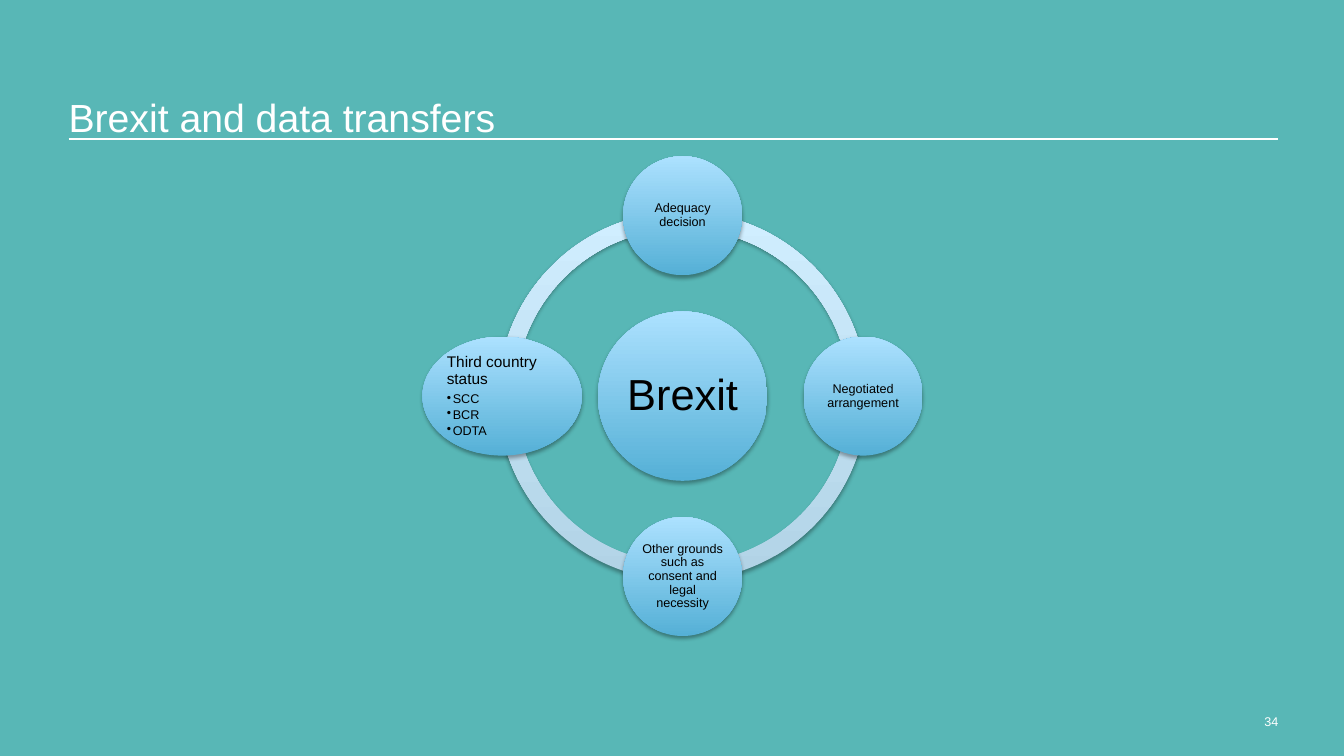
from lxml.etree import SubElement
from pptx import Presentation
from pptx.dml.color import RGBColor
from pptx.enum.shapes import MSO_CONNECTOR, MSO_SHAPE
from pptx.enum.text import MSO_ANCHOR as Anchor, MSO_AUTO_SIZE, PP_ALIGN as Align
from pptx.oxml.ns import qn
from pptx.util import Inches, Pt

TEAL = RGBColor(0x58, 0xB7, 0xB6)
WHITE = RGBColor(0xFF, 0xFF, 0xFF)
BLACK = RGBColor(0x00, 0x00, 0x00)
CIRCLE_COLOURS = RGBColor(0x55, 0xB0, 0xD6), RGBColor(0xAC, 0xE1, 0xFF)
RING_COLOURS = RGBColor(0xB2, 0xD3, 0xE6), RGBColor(0xD0, 0xEE, 0xFF)

CENTRE_X, CENTRE_Y = 6.77, 3.93
ORBIT = 1.79
RING_SIZE = 3.66
HUB_SIZE = 1.68
NODE_SIZE = 1.18
QUARTER_TURN = 54  # adjustment units: 0.6 per degree


def add_run(paragraph, text, size, colour):
    run = paragraph.add_run()
    run.text = text
    run.font.name = "Arial"
    run.font.size = Pt(size)
    run.font.color.rgb = colour


def set_frame(frame, inset, anchor):
    frame.word_wrap = True
    frame.auto_size = MSO_AUTO_SIZE.NONE
    frame.vertical_anchor = anchor
    frame.margin_left = frame.margin_right = Inches(inset)
    frame.margin_top = frame.margin_bottom = Inches(inset)


def add_shadow(shape):
    shape.shadow.inherit = False
    effects = shape._element.spPr.find(qn("a:effectLst"))
    shadow = SubElement(effects, qn("a:outerShdw"), blurRad=str(Pt(3.1)),
                        dist=str(Pt(1.8)), dir="5400000", rotWithShape="0")
    colour = SubElement(shadow, qn("a:srgbClr"), val=str(BLACK))
    SubElement(colour, qn("a:alpha"), val="35000")


def add_shaded_shape(slide, kind, centre_x, centre_y, width, height, colours):
    shape = slide.shapes.add_shape(
        kind, Inches(centre_x - width / 2), Inches(centre_y - height / 2),
        Inches(width), Inches(height))
    shape.fill.gradient()
    shape.fill.gradient_angle = 90
    for stop, colour in zip(shape.fill.gradient_stops, colours):
        stop.color.rgb = colour
    shape.line.fill.background()
    add_shadow(shape)
    return shape


def add_ring(slide):
    """Four quarter arcs that close into one ring."""
    for quarter in (2, 1, 0, 3):
        arc = add_shaded_shape(slide, MSO_SHAPE.BLOCK_ARC, CENTRE_X, CENTRE_Y,
                               RING_SIZE, RING_SIZE, RING_COLOURS)
        arc.adjustments[0] = quarter * QUARTER_TURN
        arc.adjustments[1] = (quarter + 1) % 4 * QUARTER_TURN
        arc.adjustments[2] = 0.046


def add_circle(slide, centre_x, centre_y, width, height, text, size,
               inset=0.01, align=Align.CENTER):
    circle = add_shaded_shape(slide, MSO_SHAPE.OVAL, centre_x, centre_y,
                              width, height, CIRCLE_COLOURS)
    set_frame(circle.text_frame, inset, Anchor.MIDDLE)
    paragraph = circle.text_frame.paragraphs[0]
    paragraph.alignment = align
    paragraph.line_spacing = 0.9
    add_run(paragraph, text, size, BLACK)
    return circle


def add_bullets(frame, items):
    frame.paragraphs[0].space_after = Pt(3.85)
    for item in items:
        paragraph = frame.add_paragraph()
        properties = paragraph._p.get_or_add_pPr()
        properties.set("marL", str(Inches(0.06)))
        properties.set("indent", str(Inches(-0.06)))
        bullet_colour = SubElement(properties, qn("a:buClr"))
        SubElement(bullet_colour, qn("a:srgbClr"), val=str(BLACK))
        SubElement(properties, qn("a:buChar"), char="•")
        paragraph.level = 1
        paragraph.alignment = Align.LEFT
        paragraph.line_spacing = 0.9
        paragraph.space_after = Pt(1.35)
        add_run(paragraph, item, 9, BLACK)


def add_title(slide, text):
    title = slide.shapes.title
    title.left, title.top = Inches(0.68), Inches(0.91)
    title.width, title.height = Inches(11.98), Inches(0.48)
    set_frame(title.text_frame, 0, Anchor.BOTTOM)
    paragraph = title.text_frame.paragraphs[0]
    paragraph.alignment = Align.LEFT
    add_run(paragraph, text, 28, WHITE)


def add_title_rule(slide):
    rule = slide.shapes.add_connector(MSO_CONNECTOR.STRAIGHT, Inches(0.68),
                                      Inches(1.38), Inches(12.68), Inches(1.38))
    rule.line.color.rgb = WHITE
    rule.line.width = Pt(1.25)
    SubElement(rule._element.spPr, qn("a:effectLst"))


def add_page_number(slide, number):
    box = slide.shapes.add_textbox(Inches(11.39), Inches(7.08),
                                   Inches(1.29), Inches(0.46))
    set_frame(box.text_frame, 0, Anchor.TOP)
    paragraph = box.text_frame.paragraphs[0]
    paragraph.alignment = Align.RIGHT
    add_run(paragraph, number, 9, WHITE)


def main():
    presentation = Presentation()
    presentation.slide_width = Inches(13.33)
    presentation.slide_height = Inches(7.5)
    slide = presentation.slides.add_slide(presentation.slide_layouts[5])
    slide.background.fill.solid()
    slide.background.fill.fore_color.rgb = TEAL

    add_title_rule(slide)
    add_title(slide, "Brexit and data transfers")
    add_ring(slide)
    add_circle(slide, CENTRE_X, CENTRE_Y, HUB_SIZE, HUB_SIZE, "Brexit", 31, 0.04)
    for across, down, text in (
            (0, -1, "Adequacy decision"),
            (1, 0, "Negotiated arrangement"),
            (0, 1, "Other grounds such as consent and legal necessity")):
        add_circle(slide, CENTRE_X + across * ORBIT, CENTRE_Y + down * ORBIT,
                   NODE_SIZE, NODE_SIZE, text, 9)
    third_country = add_circle(slide, CENTRE_X - ORBIT, CENTRE_Y, 1.58, NODE_SIZE,
                               "Third country status", 11, align=Align.LEFT)
    add_bullets(third_country.text_frame, ("SCC", "BCR", "ODTA"))
    add_page_number(slide, "34")
    presentation.save("out.pptx")


if __name__ == "__main__":
    main()
